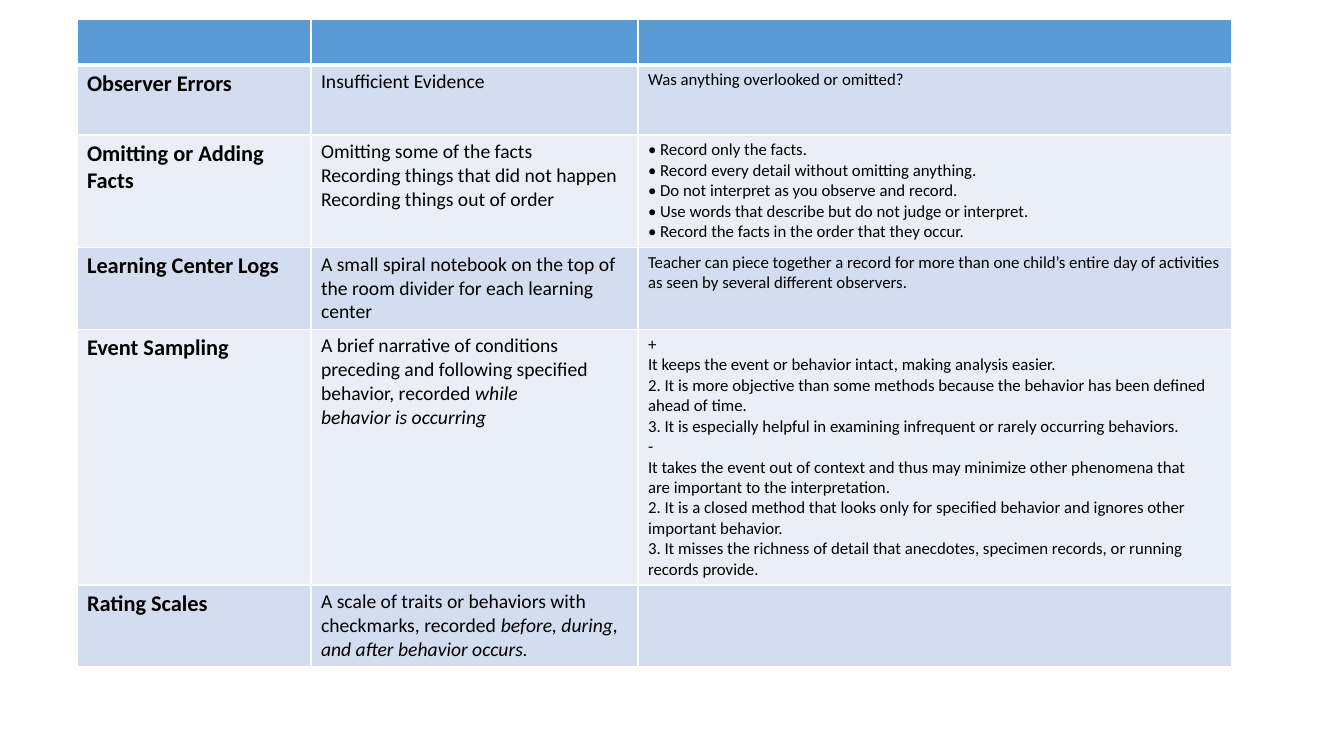
from lxml.etree import SubElement
from pptx import Presentation
from pptx.dml.color import RGBColor
from pptx.oxml.ns import qn
from pptx.util import Emu, Pt

# Content: each row has three cells, each cell a list of paragraphs.
# A paragraph is a list of (text, italic) runs, or a plain string.
ROWS = [
    ([], [], []),
    (["Observer Errors"],
     ["Insufficient Evidence"],
     ["Was anything overlooked or omitted?"]),
    (["Omitting or Adding Facts"],
     ["Omitting some of the facts",
      "Recording things that did not happen",
      "Recording things out of order"],
     ["• Record only the facts.",
      "• Record every detail without omitting anything.",
      "• Do not interpret as you observe and record.",
      "• Use words that describe but do not judge or interpret.",
      "• Record the facts in the order that they occur."]),
    (["Learning Center Logs"],
     ["A small spiral notebook on the top of the room divider for each learning center"],
     ["Teacher can piece together a record for more than one child’s entire day of "
      "activities as seen by several different observers."]),
    (["Event Sampling"],
     [[("A brief narrative of conditions preceding and following specified behavior, "
        "recorded ", False), ("while", True)],
      [("behavior is occurring", True)]],
     ["+",
      "It keeps the event or behavior intact, making analysis easier.",
      "2. It is more objective than some methods because the behavior has been defined",
      "ahead of time.",
      "3. It is especially helpful in examining infrequent or rarely occurring behaviors.",
      "-",
      "It takes the event out of context and thus may minimize other phenomena that",
      "are important to the interpretation.",
      "2. It is a closed method that looks only for specified behavior and ignores other",
      "important behavior.",
      "3. It misses the richness of detail that anecdotes, specimen records, or running",
      "records provide."]),
    (["Rating Scales"],
     [[("A scale of traits or behaviors with checkmarks, recorded ", False),
       ("before, during, and after behavior occurs.", True)]],
     []),
]

# Look and layout, lengths in px
COLORS = {"header": "5B9BD5", "odd": "D2DEEF", "even": "EAEFF7",
          "border": "FFFFFF", "text": "000000"}
FONT = "Calibri"
COLUMN_SIZES = (16, 14, 12)
PX = 914400 / 100.8
SLIDE_WIDTH, SLIDE_HEIGHT = 1344, 756
LEFT, TOP, HEIGHT = 77, 19, 641
COLUMN_WIDTHS = (234, 327, 594)
ROW_HEIGHTS = (46, 70, 60, 60, 60, 60)  # rows grow to fit their text


def px(length):
    return Emu(round(length * PX))


def set_borders(cell, row_index):
    properties = cell._tc.get_or_add_tcPr()
    widths = {"a:lnL": 1, "a:lnR": 1,
              "a:lnT": 3 if row_index == 1 else 1,
              "a:lnB": 3 if row_index == 0 else 1}
    for tag, width in widths.items():
        line = SubElement(properties, qn(tag), w=str(Pt(width)))
        fill = SubElement(line, qn("a:solidFill"))
        SubElement(fill, qn("a:srgbClr"), val=COLORS["border"])


def fill_cell(cell, paragraphs, size, bold):
    for index, content in enumerate(paragraphs):
        frame = cell.text_frame
        paragraph = frame.add_paragraph() if index else frame.paragraphs[0]
        runs = [(content, False)] if isinstance(content, str) else content
        for text, italic in runs:
            run = paragraph.add_run()
            run.text = text
            font = run.font
            font.name, font.size = FONT, Pt(size)
            font.bold, font.italic = bold, italic
            font.color.rgb = RGBColor.from_string(COLORS["text"])


# Slide
presentation = Presentation()
presentation.slide_width, presentation.slide_height = px(SLIDE_WIDTH), px(SLIDE_HEIGHT)
slide = presentation.slides.add_slide(presentation.slide_layouts[6])

# Table
table_shape = slide.shapes.add_table(
    len(ROWS), len(COLUMN_WIDTHS), px(LEFT), px(TOP), px(sum(COLUMN_WIDTHS)), px(HEIGHT))
table = table_shape.table
table.horz_banding = False
for column, width in zip(table.columns, COLUMN_WIDTHS):
    column.width = px(width)
for row, height in zip(table.rows, ROW_HEIGHTS):
    row.height = px(height)
table_shape.height = px(HEIGHT)

# Cells
for row_index, row_content in enumerate(ROWS):
    band = "header" if row_index == 0 else "odd" if row_index % 2 else "even"
    for column_index, paragraphs in enumerate(row_content):
        cell = table.cell(row_index, column_index)
        set_borders(cell, row_index)
        cell.fill.solid()
        cell.fill.fore_color.rgb = RGBColor.from_string(COLORS[band])
        fill_cell(cell, paragraphs, COLUMN_SIZES[column_index], column_index == 0)

presentation.save("out.pptx")
